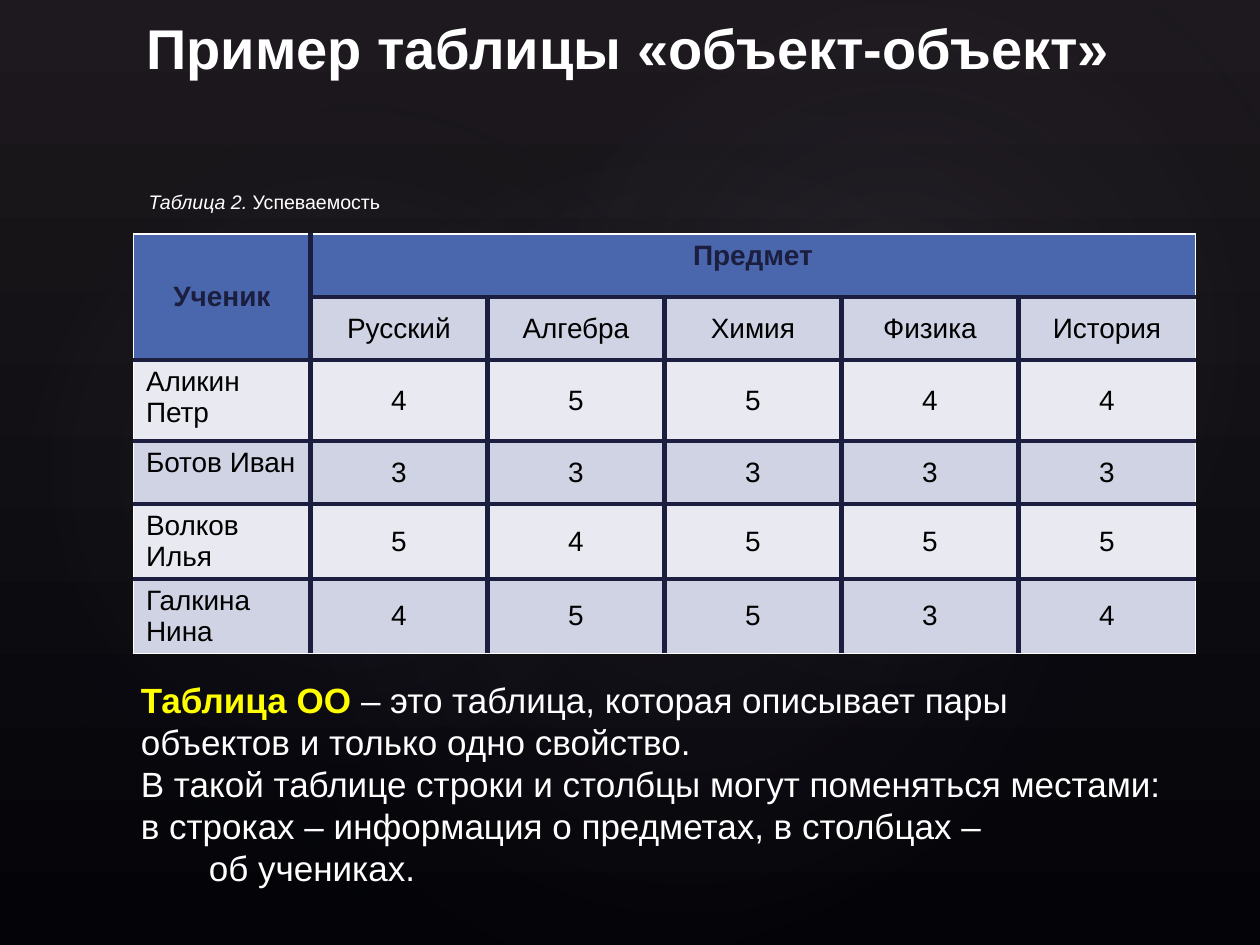
from lxml import etree
from pptx import Presentation
from pptx.dml.color import RGBColor
from pptx.enum.shapes import MSO_SHAPE
from pptx.enum.text import MSO_ANCHOR, MSO_AUTO_SIZE, PP_ALIGN
from pptx.oxml import parse_xml
from pptx.oxml.ns import nsdecls, qn
from pptx.util import Cm, Pt

WHITE = RGBColor(0xFF, 0xFF, 0xFF)
BLACK = RGBColor(0, 0, 0)
YELLOW = RGBColor(0xFF, 0xFF, 0)
NAVY = RGBColor(0x1B, 0x1E, 0x3E)
BLUE = RGBColor(0x4A, 0x66, 0xAC)
BAND_DARK = RGBColor(0xD0, 0xD3, 0xE3)
BAND_LIGHT = RGBColor(0xE9, 0xEA, 0xF1)
SKY_TOP = RGBColor(0x1D, 0x19, 0x1E)
SKY_BOTTOM = RGBColor(0x04, 0x04, 0x08)
GLOW = RGBColor(0xC4, 0xBC, 0xC6)
GLOW_EDGE = RGBColor(0x24, 0x28, 0x52)

TITLE = "Пример таблицы «объект-объект»"
CAPTION = [("Таблица 2. ", {"italic": True}), ("Успеваемость", {"italic": False})]
CORNER, GROUP = "Ученик", "Предмет"
SUBJECTS = ["Русский", "Алгебра", "Химия", "Физика", "История"]
GRADES = {
    "Аликин Петр": [4, 5, 5, 4, 4],
    "Ботов Иван": [3, 3, 3, 3, 3],
    "Волков Илья": [5, 4, 5, 5, 5],
    "Галкина Нина": [4, 5, 5, 3, 4],
}
# Left indent in cm, then the runs of the paragraph
DEFINITION = [
    (0, [("Таблица ОО ", YELLOW, True),
         ("– это таблица, которая описывает пары объектов и только одно свойство.", WHITE, False)]),
    (0, [("В такой таблице строки и столбцы могут поменяться местами:", WHITE, False)]),
    (0, [("в строках – информация о предметах, в столбцах –", WHITE, False)]),
    (1.37, [("об учениках.", WHITE, False)]),
]

# Left, top, width, height in cm, rotation in degrees, opacity in percent
GLOWS = [
    (3.81, 2.9, 20.12, 15.85, 328.7, 7),
    (-0.76, 3.25, 15.39, 12.45, 294.3, 8),
    (9.09, 0.33, 18.01, 13.21, 328.7, 8),
]
TITLE_BOX = (2.67, 0.53, 19.99, 1.22)
CAPTION_BOX = (2.69, 3.73, 21.41, 0.69)
TABLE_BOX = (2.69, 4.72, 21.41, 8.66)
DEFINITION_BOX = (2.59, 13.56, 21.18, 4.52)
ROW_HEIGHTS = [1.27, 1.27, 1.63, 1.27, 1.27, 1.27]


def apply(target, values):
    for name, value in values.items():
        setattr(target, name, value)


def place(shape, box):
    apply(shape, dict(zip(("left", "top", "width", "height"), map(Cm, box))))


def add_run(paragraph, text, color, **font):
    run = paragraph.add_run()
    run.text = text
    run.font.color.rgb = color
    apply(run.font, {"name": "Arial", **font})


def add_glow(slide, box, rotation, opacity):
    """Add a faint radial light behind everything else."""
    ellipse = slide.shapes.add_shape(MSO_SHAPE.OVAL, *map(Cm, box))
    ellipse.rotation = rotation
    ellipse.shadow.inherit = False
    ellipse.line.fill.background()
    properties = ellipse._element.spPr
    gradient = parse_xml(
        f'<a:gradFill {nsdecls("a")}><a:gsLst>'
        f'<a:gs pos="0"><a:srgbClr val="{GLOW}"><a:alpha val="{opacity * 1000}"/></a:srgbClr></a:gs>'
        f'<a:gs pos="58000"><a:srgbClr val="{GLOW_EDGE}"><a:alpha val="0"/></a:srgbClr></a:gs>'
        '</a:gsLst><a:path path="circle">'
        '<a:fillToRect l="50000" t="50000" r="50000" b="50000"/></a:path></a:gradFill>')
    properties.find(qn("a:prstGeom")).addnext(gradient)
    return ellipse._element


def set_borders(cell, outer_sides):
    """Thin white lines on the table's outer sides, thick navy ones inside."""
    properties = cell._tc.get_or_add_tcPr()
    for position, side in enumerate("LRTB"):
        color, width = (WHITE, 1) if side in outer_sides else (NAVY, 3)
        properties.insert(position, parse_xml(
            f'<a:ln{side} {nsdecls("a")} w="{Pt(width)}"><a:solidFill>'
            f'<a:srgbClr val="{color}"/></a:solidFill></a:ln{side}>'))


def add_grades(slide):
    rows = [[CORNER, GROUP], ["", *SUBJECTS]]
    rows += [[pupil, *marks] for pupil, marks in GRADES.items()]
    row_count, column_count = len(rows), len(SUBJECTS) + 1
    frame = slide.shapes.add_table(row_count, column_count, *map(Cm, TABLE_BOX))
    table = frame.table
    table.cell(0, 0).merge(table.cell(1, 0))
    table.cell(0, 1).merge(table.cell(0, column_count - 1))
    for row, height in zip(table.rows, ROW_HEIGHTS):
        row.height = Cm(height)
    frame.height = Cm(TABLE_BOX[3])

    for r, texts in enumerate(rows):
        for c, text in enumerate(texts):
            cell = table.cell(r, c)
            if cell.is_spanned:
                continue
            header, pupil = r == 0, r > 1 and c == 0
            group = header and c == 1
            cell.fill.solid()
            cell.fill.fore_color.rgb = BLUE if header else BAND_DARK if r % 2 else BAND_LIGHT
            cell.vertical_anchor = MSO_ANCHOR.TOP if pupil or group else MSO_ANCHOR.MIDDLE
            paragraph = cell.text_frame.paragraphs[0]
            paragraph.alignment = PP_ALIGN.LEFT if pupil else PP_ALIGN.CENTER
            add_run(paragraph, str(text), NAVY if header else BLACK, size=Pt(16), bold=header)
            edges = {"L": c == 0, "T": r == 0,
                     "R": c + cell.span_width == column_count,
                     "B": r + cell.span_height == row_count}
            set_borders(cell, [side for side, outer in edges.items() if outer])
    # Band colours follow the rows: row 3 and row 5 are dark, as is the subject row


def main():
    prs = Presentation()
    apply(prs, {"slide_width": Cm(25.4), "slide_height": Cm(19.05)})
    slide = prs.slides.add_slide(prs.slide_layouts[1])

    sky = slide.background.fill
    sky.gradient()
    sky.gradient_angle = 270
    for stop, color in zip(sky.gradient_stops, (SKY_TOP, SKY_BOTTOM)):
        stop.color.rgb = color

    title, caption = slide.placeholders
    for *box, rotation, opacity in GLOWS:
        title._element.addprevious(add_glow(slide, box, rotation, opacity))

    place(title, TITLE_BOX)
    apply(title.text_frame, {"vertical_anchor": MSO_ANCHOR.BOTTOM, "word_wrap": True,
                             "auto_size": MSO_AUTO_SIZE.NONE})
    heading = title.text_frame.paragraphs[0]
    heading.alignment = PP_ALIGN.CENTER
    add_run(heading, TITLE, WHITE, size=Pt(32), bold=True)

    place(caption, CAPTION_BOX)
    apply(caption.text_frame, {"vertical_anchor": MSO_ANCHOR.MIDDLE, "word_wrap": True,
                               "auto_size": MSO_AUTO_SIZE.NONE})
    label = caption.text_frame.paragraphs[0]
    label_format = label._p.get_or_add_pPr()
    label_format.set("marL", str(Cm(0.76)))
    label_format.set("indent", str(Cm(-0.71)))
    etree.SubElement(label_format, qn("a:buNone"))
    for text, style in CAPTION:
        add_run(label, text, WHITE, size=Pt(11.2), **style)

    add_grades(slide)

    definition = slide.shapes.add_textbox(*map(Cm, DEFINITION_BOX)).text_frame
    apply(definition, {"word_wrap": True, "auto_size": MSO_AUTO_SIZE.SHAPE_TO_FIT_TEXT})
    for i, (indent, runs) in enumerate(DEFINITION):
        paragraph = definition.add_paragraph() if i else definition.paragraphs[0]
        if indent:
            paragraph._p.get_or_add_pPr().set("marL", str(Cm(indent)))
        for text, color, bold in runs:
            add_run(paragraph, text, color, size=Pt(20), bold=bold)

    prs.save("out.pptx")


if __name__ == "__main__":
    main()
